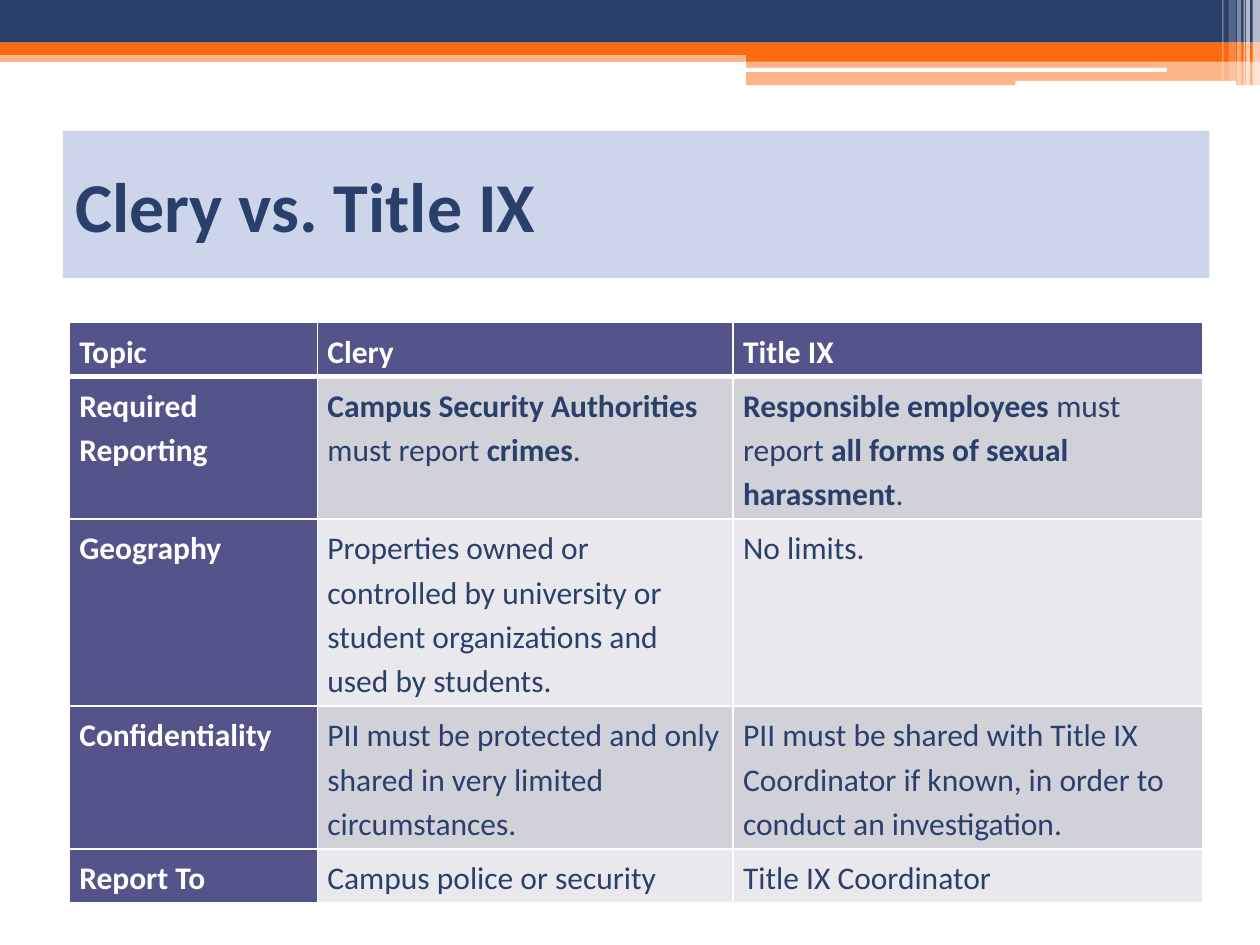
from lxml import etree
from pptx import Presentation
from pptx.dml.color import RGBColor
from pptx.enum.shapes import MSO_SHAPE
from pptx.enum.text import MSO_ANCHOR
from pptx.oxml.ns import qn
from pptx.util import Cm, Pt

RECT = MSO_SHAPE.RECTANGLE
ROUNDED = MSO_SHAPE.ROUNDED_RECTANGLE
MIDDLE = MSO_ANCHOR.MIDDLE

FONT = "Calibri"
COLORS = {
    "navy": "2B3F6B",
    "orange": "FC6A10",
    "white": "FFFFFF",
    "title_fill": "CCD5EA",
    "heading": "53548A",
    "band_dark": "D1D1DA",
    "band_light": "E9E9ED",
}

# Left, top, width, height in cm, colour, opacity in percent
BANNER_BARS = [
    (0, 1.02, 25.4, 0.23, "orange", 50),
    (0, 0, 25.4, 0.86, "navy", 100),
    (0, 0.86, 25.4, 0.25, "orange", 100),
    (15.04, 0.99, 10.36, 0.25, "orange", 100),
    (15.04, 1.22, 10.36, 0.5, "orange", 50),
]
BANNER_CUTOUTS = [
    (15.01, 1.37, 8.51, 0.08, "white", 100),
    (20.47, 1.63, 4.45, 0.1, "white", 100),
]
# Left, width, height in cm, opacity in percent
BANNER_STRIPES = [
    (25.25, 0.15, 1.73, 65),
    (25.12, 0.08, 1.73, 65),
    (25.07, 0.03, 1.73, 60),
    (24.94, 0.08, 1.73, 40),
    (24.77, 0.15, 1.63, 20),
    (24.64, 0.03, 1.63, 30),
]

COLUMN_WIDTHS = [5, 8.38, 9.47]
ROW_HEIGHTS = [1.09, 2.87, 3.77, 2.87, 1.09]
# Text between double asterisks is bold
COMPARISON = [
    ["**Topic**", "**Clery**", "**Title IX**"],
    ["**Required Reporting**",
     "**Campus Security Authorities** must report **crimes**.",
     "**Responsible employees **must report **all forms of sexual harassment**."],
    ["**Geography**",
     "Properties owned or controlled by university or student organizations "
     "and used by students.",
     "No limits."],
    ["**Confidentiality**",
     "PII must be protected and only shared in very limited circumstances.",
     "PII must be shared with Title IX Coordinator if known, in order to "
     "conduct an investigation."],
    ["**Report To**", "Campus police or security", "Title IX Coordinator"],
]


def rgb(name):
    return RGBColor.from_string(COLORS[name])


def add_bar(slide, kind, left, top, width, height, color, opacity):
    bar = slide.shapes.add_shape(kind, Cm(left), Cm(top), Cm(width), Cm(height))
    bar.shadow.inherit = False
    bar.fill.solid()
    bar.fill.fore_color.rgb = rgb(color)
    bar.line.fill.background()
    if opacity < 100:
        srgb = bar.fill._xPr.find(f".//{qn('a:srgbClr')}")
        etree.SubElement(srgb, qn("a:alpha"), val=str(opacity * 1000))


def add_banner(slide, left, top):
    stripes = [(x, 0, width, height, "white", opacity)
               for x, width, height, opacity in BANNER_STRIPES]
    for kind, bars in ((RECT, BANNER_BARS), (ROUNDED, BANNER_CUTOUTS), (RECT, stripes)):
        for x, y, *rest in bars:
            add_bar(slide, kind, left + x, top + y, *rest)


def add_title(slide, left, top, width, height):
    title = slide.shapes.add_textbox(Cm(left), Cm(top), Cm(width), Cm(height))
    title.fill.solid()
    title.fill.fore_color.rgb = rgb("title_fill")
    frame = title.text_frame
    frame.word_wrap = True
    frame.vertical_anchor = MIDDLE
    paragraph = frame.paragraphs[0]
    paragraph.text = "Clery vs. Title IX"
    font = paragraph.font
    font.name, font.size, font.bold = FONT, Pt(40), True
    font.color.rgb = rgb("navy")


def add_borders(cell, row):
    """White lines, thicker between the heading row and the body."""
    thick_side = {0: "B", 1: "T"}.get(row)
    properties = cell._tc.get_or_add_tcPr()
    for side in "LRTB":
        width = Pt(3 if side == thick_side else 1)
        line = etree.SubElement(properties, qn(f"a:ln{side}"), w=str(width))
        fill = etree.SubElement(line, qn("a:solidFill"))
        etree.SubElement(fill, qn("a:srgbClr"), val=COLORS["white"])


def fill_cell(cell, text, row, column):
    is_heading = row == 0 or column == 0
    add_borders(cell, row)
    cell.fill.solid()
    band = "band_dark" if row % 2 else "band_light"
    cell.fill.fore_color.rgb = rgb("heading" if is_heading else band)
    cell.margin_left = cell.margin_right = Cm(0.2)
    cell.margin_top = cell.margin_bottom = Cm(0.1)

    paragraph = cell.text_frame.paragraphs[0]
    paragraph.line_spacing = 1.15
    paragraph.font.name, paragraph.font.size = FONT, Pt(18)
    paragraph.font.color.rgb = rgb("white" if is_heading else "navy")
    for index, part in enumerate(text.split("**")):
        if part:
            run = paragraph.add_run()
            run.text = part
            run.font.bold = index % 2 == 1


def add_comparison(slide, left, top):
    table = slide.shapes.add_table(
        len(ROW_HEIGHTS), len(COLUMN_WIDTHS), Cm(left), Cm(top),
        Cm(sum(COLUMN_WIDTHS)), Cm(sum(ROW_HEIGHTS))).table
    for column, width in zip(table.columns, COLUMN_WIDTHS):
        column.width = Cm(width)
    for row, height in zip(table.rows, ROW_HEIGHTS):
        row.height = Cm(height)
    for row, texts in enumerate(COMPARISON):
        for column, text in enumerate(texts):
            fill_cell(table.cell(row, column), text, row, column)


def main():
    presentation = Presentation()
    presentation.slide_width, presentation.slide_height = Cm(25.4), Cm(19.05)
    slide = presentation.slides.add_slide(presentation.slide_layouts[6])
    add_banner(slide, 0, 0)
    add_comparison(slide, 1.4, 6.5)
    add_title(slide, 1.27, 2.64, 23.11, 2.97)
    presentation.save("out.pptx")


if __name__ == "__main__":
    main()
